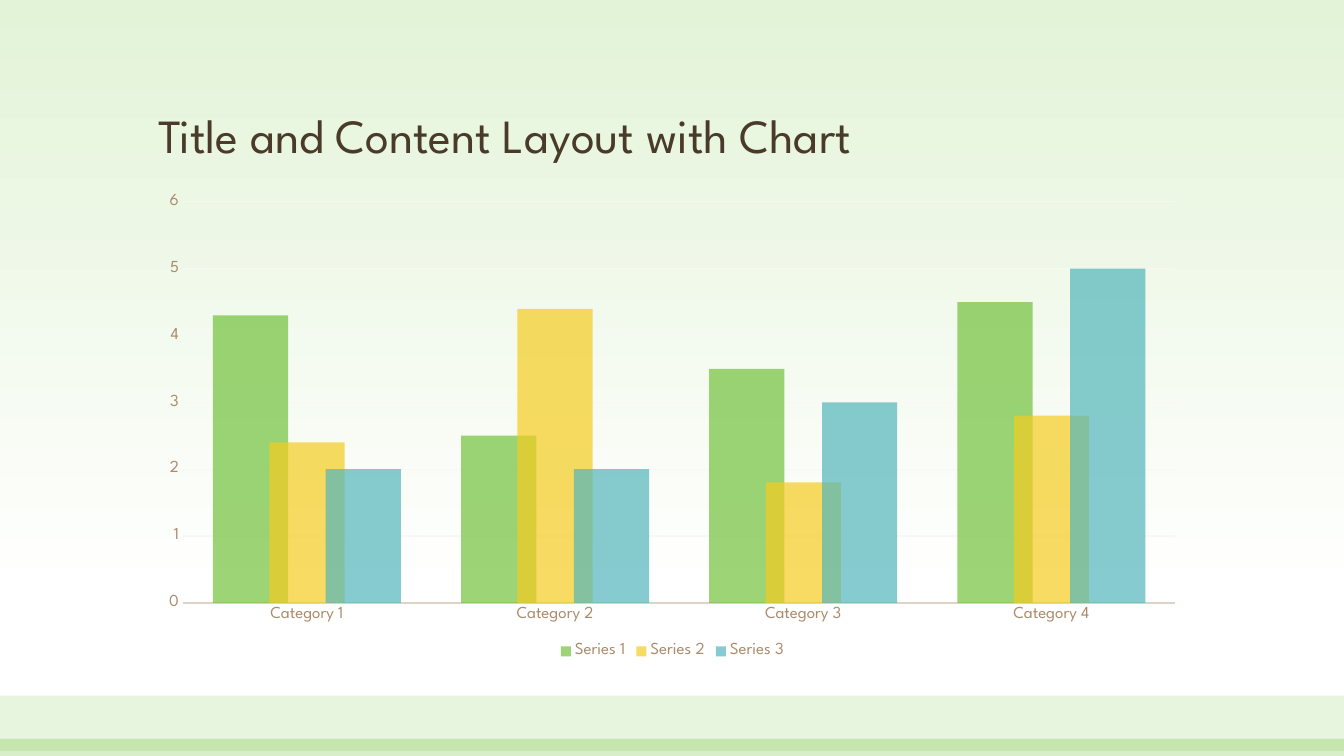
from pptx import Presentation
from pptx.chart import data
from pptx.dml.color import RGBColor
from pptx.enum import chart as ch, shapes, text
from pptx.oxml import ns
from pptx.util import Pt
from lxml import etree

# Content
TITLE = "Title and Content Layout with Chart"
CATEGORIES = ["Category 1", "Category 2", "Category 3", "Category 4"]
GREEN = RGBColor(0x72, 0xC2, 0x3C)
YELLOW = RGBColor(0xF4, 0xCC, 0x20)
TEAL = RGBColor(0x53, 0xB6, 0xBB)
SERIES = [
    ("Series 1", (4.3, 2.5, 3.5, 4.5), GREEN),
    ("Series 2", (2.4, 4.4, 1.8, 2.8), YELLOW),
    ("Series 3", (2, 2, 3, 5), TEAL),
]

# Style
FONT = "League Spartan"
TITLE_BROWN = RGBColor(0x4A, 0x3A, 0x2A)
CHART_BROWN = RGBColor(0x62, 0x4D, 0x38)
LABEL_BROWN = RGBColor(0xAB, 0x8B, 0x6C)
AXIS_LINE = RGBColor(0xDF, 0xD2, 0xC6)
GRID_LINE = RGBColor(0xF9, 0xF6, 0xF4)
PALE_GREEN = RGBColor(0xE3, 0xF3, 0xD8)
WHITE = RGBColor(0xFF, 0xFF, 0xFF)

# Layout
WIDTH, HEIGHT = 960, 540
LEFT, CONTENT_WIDTH = 105.84, 748.8
BANDS = [(496.8, 39.6, 17), (527.76, 12.24, 28)]  # top, height, opacity


def style_font(font, size, color):
    font.name, font.size, font.color.rgb = FONT, Pt(size), color


def fill_tint(fill, parent, color, opacity):
    fill.solid()
    fill.fore_color.rgb = color
    srgb = parent.find(".//" + ns.qn("a:solidFill")).find(ns.qn("a:srgbClr"))
    etree.SubElement(srgb, ns.qn("a:alpha")).set("val", str(opacity * 1000))


def add_text(slide, words, left, top, width, height, *, size, color,
             anchor=text.MSO_ANCHOR.TOP, spacing=1.0):
    frame = slide.shapes.add_textbox(Pt(left), Pt(top), Pt(width), Pt(height)).text_frame
    frame.word_wrap = True
    frame.vertical_anchor = anchor
    paragraph = frame.paragraphs[0]
    paragraph.line_spacing = spacing
    run = paragraph.add_run()
    run.text = words
    style_font(run.font, size, color)


def add_background(slide):
    fill = slide.background.fill
    fill.gradient()
    fill.gradient_angle = 270
    for stop, position, color in zip(fill.gradient_stops, (0, 0.79), (PALE_GREEN, WHITE)):
        stop.position = position
        stop.color.rgb = color


def add_bands(slide):
    for top, height, opacity in BANDS:
        band = slide.shapes.add_shape(
            shapes.MSO_SHAPE.RECTANGLE, 0, Pt(top), Pt(WIDTH), Pt(height))
        band.shadow.inherit = False
        band.line.fill.background()
        fill_tint(band.fill, band.element.spPr, GREEN, opacity)


def add_columns(slide):
    table = data.CategoryChartData()
    table.categories = CATEGORIES
    for name, values, _ in SERIES:
        table.add_series(name, values)
    chart = slide.shapes.add_chart(
        ch.XL_CHART_TYPE.COLUMN_CLUSTERED, Pt(LEFT), Pt(131.76),
        Pt(CONTENT_WIDTH), Pt(342), table).chart
    chart.has_title = False
    style_font(chart.font, 10, CHART_BROWN)

    # Columns
    plot = chart.plots[0]
    plot.vary_by_categories = False
    plot.gap_width, plot.overlap = 80, 25
    for columns, (_, _, color) in zip(plot.series, SERIES):
        fill = columns.format.fill
        fill_tint(fill, columns._element, color, 70)

    # Axes
    for axis in (chart.category_axis, chart.value_axis):
        axis.major_tick_mark = axis.minor_tick_mark = ch.XL_TICK_MARK.NONE
        style_font(axis.tick_labels.font, 12, LABEL_BROWN)
    baseline = chart.category_axis.format.line
    baseline.color.rgb, baseline.width = AXIS_LINE, Pt(1.25)
    scale = chart.value_axis
    scale.minimum_scale, scale.maximum_scale, scale.major_unit = 0, 6, 1
    scale.format.line.fill.background()
    scale.has_major_gridlines = True
    grid = scale.major_gridlines.format.line
    grid.color.rgb, grid.width = GRID_LINE, Pt(0.75)

    # Legend
    chart.has_legend = True
    chart.legend.position = ch.XL_LEGEND_POSITION.BOTTOM
    chart.legend.include_in_layout = False
    style_font(chart.legend.font, 12, LABEL_BROWN)


def main():
    deck = Presentation()
    deck.slide_width, deck.slide_height = Pt(WIDTH), Pt(HEIGHT)
    slide = deck.slides.add_slide(deck.slide_layouts[6])
    add_background(slide)
    add_bands(slide)
    add_text(slide, TITLE, LEFT, 34.56, CONTENT_WIDTH, 85.68, size=34,
             color=TITLE_BROWN, anchor=text.MSO_ANCHOR.BOTTOM, spacing=0.9)
    add_columns(slide)
    deck.save("out.pptx")


if __name__ == "__main__":
    main()
